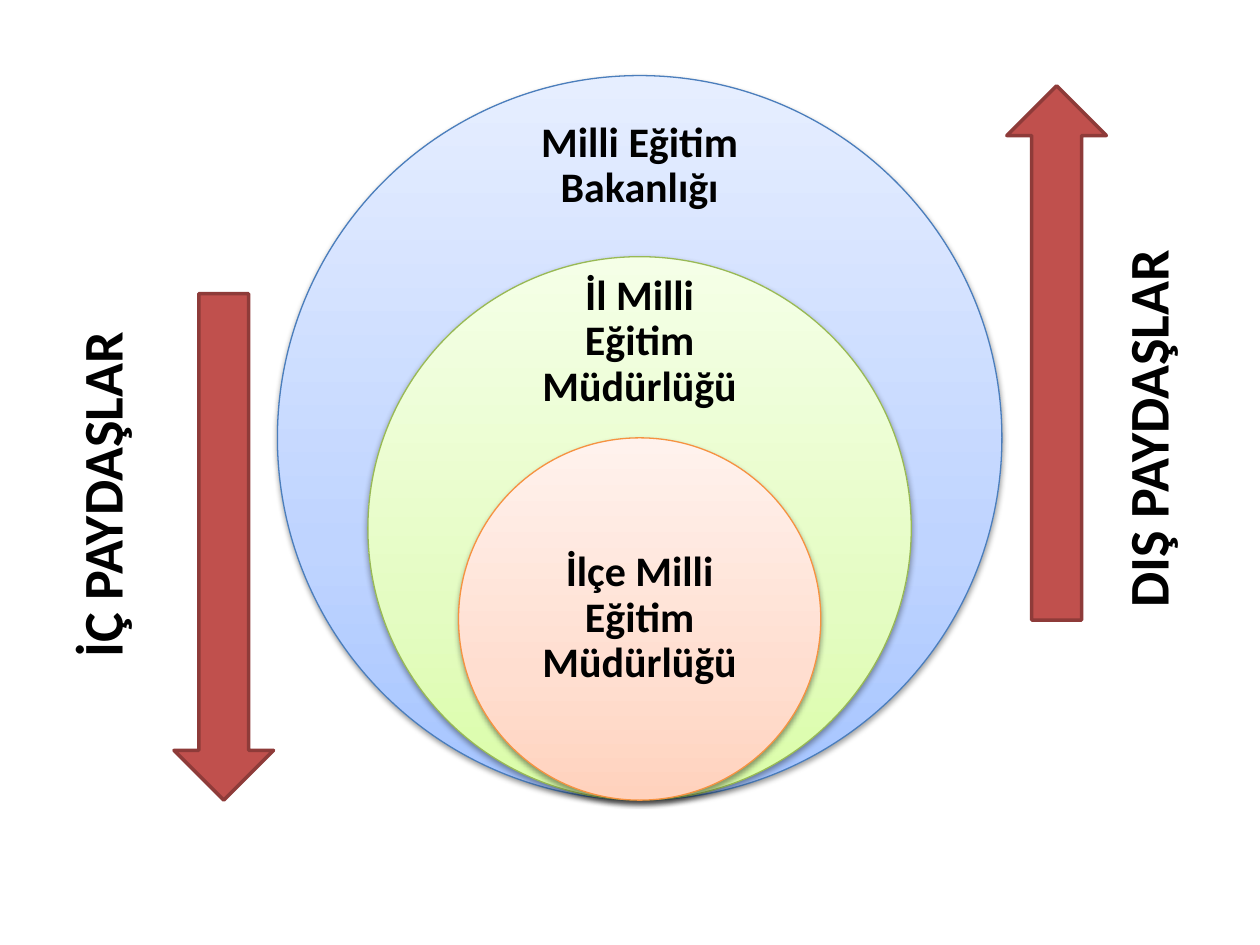
from pptx import Presentation
from pptx.dml.color import RGBColor as Color
from pptx.enum.shapes import MSO_SHAPE as Preset
from pptx.enum.text import MSO_ANCHOR as Anchor, MSO_AUTO_SIZE as AutoSize, PP_ALIGN as Align
from pptx.oxml import parse_xml
from pptx.util import Pt

RINGS = [
    ("Milli Eğitim Bakanlığı", 1, "blue", (64, 62)),
    ("İl Milli Eğitim Müdürlüğü", 0.75, "green", (166.3, 58.3)),
    ("İlçe Milli Eğitim Müdürlüğü", 0.5, "orange", (301.7, 103.7)),
]
ARROWS = [(99.4, 167.8, 289.4, 0), (575.3, 49, 305.3, 180)]
SIDES = [
    ("İÇ PAYDAŞLAR", 34.6, 174.2, 208.8),
    ("DIŞ PAYDAŞLAR", 632.2, 128.2, 226.1),
]
CENTER, BOTTOM, DIAMETER = 365.5, 457.2, 414
LABEL_WIDTH, ARROW_WIDTH, SIDE_WIDTH = 145, 56.9, 53.3

THEME = {
    "font": "Calibri",
    "text": "000000",
    "ring_size": 24,
    "side_size": 32,
    "blue": (("A4C4FF", "BFD4FF", "E6EEFF"), "4B7EBC"),
    "green": (("DAFDA7", "E4FCC2", "F5FFE7"), "98B955"),
    "orange": (("FFD2BD", "FFDED0", "FFF2ED"), "F69240"),
    "arrow": ("C0504D", "8E3B39"),
    "stops": (0, 35, 100),
}
NS = 'xmlns:a="http://schemas.openxmlformats.org/drawingml/2006/main"'
SHADOW = (
    f'<a:outerShdw {NS} blurRad="40000" dist="20000" dir="5400000" rotWithShape="0">'
    '<a:srgbClr val="000000"><a:alpha val="38000"/></a:srgbClr></a:outerShdw>'
)


def set_line(shape, color, width):
    shape.line.color.rgb = Color.from_string(color)
    shape.line.width = Pt(width)
    shape.shadow.inherit = False


def add_label(shapes, text, area, size):
    box = shapes.add_textbox(*map(Pt, area))
    frame = box.text_frame
    frame.word_wrap = True
    para = frame.paragraphs[0]
    para.text = text
    para.font.name = THEME["font"]
    para.font.size = Pt(size)
    para.font.bold = True
    para.font.color.rgb = Color.from_string(THEME["text"])
    return frame, para


def add_ring(shapes, text, scale, color, label_span):
    size = DIAMETER * scale
    area = (CENTER - size / 2, BOTTOM - size, size, size)
    ring = shapes.add_shape(Preset.OVAL, *map(Pt, area))
    colors, edge = THEME[color]
    stops = "".join(
        f'<a:gs pos="{stop * 1000}"><a:srgbClr val="{value}"/></a:gs>'
        for stop, value in zip(THEME["stops"], colors)
    )
    gradient = parse_xml(
        f'<a:gradFill {NS} rotWithShape="1"><a:gsLst>{stops}</a:gsLst>'
        '<a:lin ang="16200000" scaled="0"/></a:gradFill>'
    )
    ring._element.spPr.find("{*}prstGeom").addnext(gradient)
    set_line(ring, edge, 0.75)
    ring._element.spPr.find("{*}effectLst").append(parse_xml(SHADOW))

    top, height = label_span
    area = (CENTER - LABEL_WIDTH / 2, top, LABEL_WIDTH, height)
    frame, para = add_label(shapes, text, area, THEME["ring_size"])
    frame.vertical_anchor = Anchor.MIDDLE
    frame.margin_left = frame.margin_right = Pt(13.5)
    frame.margin_top = frame.margin_bottom = Pt(13.5)
    para.alignment = Align.CENTER
    para.line_spacing = 0.9
    para.space_after = Pt(8.4)


def add_arrow(shapes, left, top, height, rotation):
    area = (left, top, ARROW_WIDTH, height)
    arrow = shapes.add_shape(Preset.DOWN_ARROW, *map(Pt, area))
    arrow.rotation = rotation
    fill, edge = THEME["arrow"]
    arrow.fill.solid()
    arrow.fill.fore_color.rgb = Color.from_string(fill)
    set_line(arrow, edge, 2)


def add_side(shapes, text, left, top, height):
    area = (left, top, SIDE_WIDTH, height)
    frame, para = add_label(shapes, text, area, THEME["side_size"])
    frame.auto_size = AutoSize.SHAPE_TO_FIT_TEXT
    frame._txBody.bodyPr.set("vert", "vert270")


def main():
    deck = Presentation()
    deck.slide_width, deck.slide_height = Pt(720), Pt(540)
    page = deck.slides.add_slide(deck.slide_layouts[6])
    diagram = page.shapes.add_group_shape()
    for ring in RINGS:
        add_ring(diagram.shapes, *ring)
    for arrow in ARROWS:
        add_arrow(page.shapes, *arrow)
    for side in SIDES:
        add_side(page.shapes, *side)
    deck.save("out.pptx")


if __name__ == "__main__":
    main()
